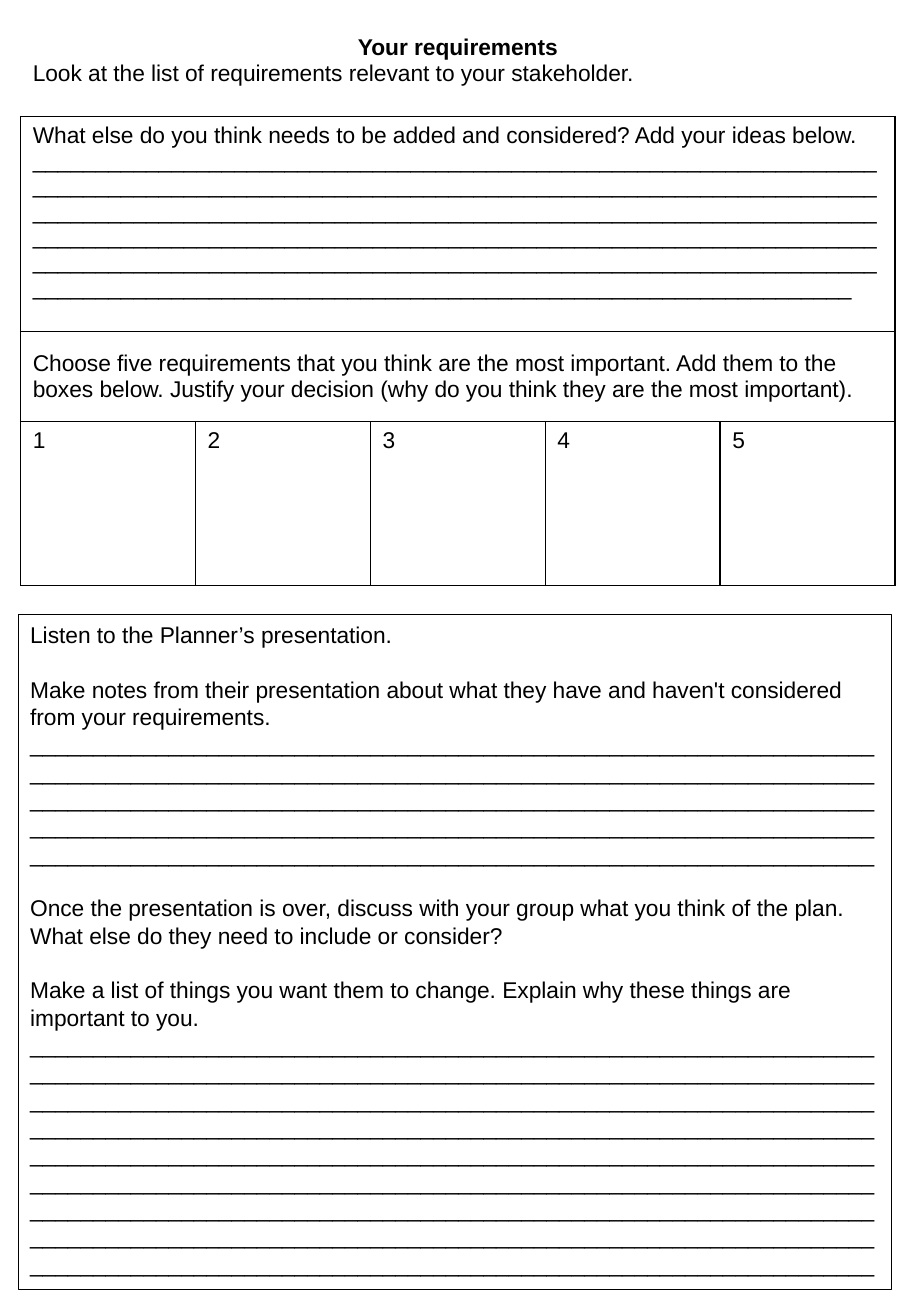
from lxml import etree
from pptx import Presentation
from pptx.dml.color import RGBColor
from pptx.enum.shapes import MSO_SHAPE
from pptx.enum.text import MSO_ANCHOR, PP_ALIGN
from pptx.oxml.ns import qn
from pptx.util import Inches, Pt

LEFT, CENTER = PP_ALIGN.LEFT, PP_ALIGN.CENTER
TOP, MIDDLE = MSO_ANCHOR.TOP, MSO_ANCHOR.MIDDLE
RECTANGLE = MSO_SHAPE.RECTANGLE

WIDTH, HEIGHT = 7.5, 10.83
INK = "000000"
FONT, SIZE = "Arial", 13.5
LINE_MARKS = 67
BLANK_LINE = 16.2
COLUMNS, COLUMN_WIDTH = 5, 1.44
PANEL_WIDTH = 7.19


def writing_lines(count, missing=0):
    return "_" * (count * LINE_MARKS - missing)


INTRO = [
    ("Your requirements", {"bold": True, "align": CENTER}),
    ("Look at the list of requirements relevant to your stakeholder.", {}),
]
IDEAS = [
    ("What else do you think needs to be added and considered? Add your ideas below.", {}),
    (writing_lines(6, missing=2), {}),
]
CHOICE = [
    ("Choose five requirements that you think are the most important. Add them to the "
     "boxes below. Justify your decision (why do you think they are the most important).", {}),
]
WIDE_ROWS = [
    {"content": INTRO, "height": 0.72, "anchor": TOP, "sides": "B"},
    {"content": IDEAS, "height": 1.77, "anchor": TOP, "sides": "LRTB"},
    {"content": CHOICE, "height": 0.74, "anchor": MIDDLE, "sides": "LRTB"},
]
NUMBER_ROW_HEIGHT = 1.35
PRESENTATION_NOTES = [
    ("Listen to the Planner’s presentation.", {}),
    ("Make notes from their presentation about what they have and haven't considered "
     "from your requirements.", {"before": BLANK_LINE}),
    (writing_lines(5), {}),
    ("Once the presentation is over, discuss with your group what you think of the plan. "
     "What else do they need to include or consider?", {"before": BLANK_LINE}),
    ("Make a list of things you want them to change. Explain why these things are "
     "important to you.", {"before": BLANK_LINE}),
    (writing_lines(9), {}),
]


def color(value):
    return RGBColor.from_string(value)


def write(paragraph, text, bold=False, align=LEFT, before=0):
    paragraph.alignment = align
    paragraph.space_before = Pt(before)
    run = paragraph.add_run()
    run.text = text
    run.font.name = FONT
    run.font.size = Pt(SIZE)
    run.font.bold = bold
    run.font.color.rgb = color(INK)


def fill_frame(frame, content):
    for index, (text, style) in enumerate(content):
        paragraph = frame.add_paragraph() if index else frame.paragraphs[0]
        write(paragraph, text, **style)


def border(cell, sides):
    properties = cell._tc.get_or_add_tcPr()
    for side in "LRTB":
        line = etree.SubElement(properties, qn(f"a:ln{side}"), w=str(Pt(1)))
        if side in sides:
            solid = etree.SubElement(line, qn("a:solidFill"))
            etree.SubElement(solid, qn("a:srgbClr"), val=INK)
        else:
            etree.SubElement(line, qn("a:noFill"))
    cell.fill.background()


def add_requirements(slide):
    heights = [row["height"] for row in WIDE_ROWS] + [NUMBER_ROW_HEIGHT]
    table = slide.shapes.add_table(
        len(heights), COLUMNS, Inches(0.17), Inches(0.24),
        Inches(COLUMNS * COLUMN_WIDTH), Inches(sum(heights))).table
    table.first_row = table.horz_banding = False
    for column in table.columns:
        column.width = Inches(COLUMN_WIDTH)
    for row, height in zip(table.rows, heights):
        row.height = Inches(height)
    for index, row in enumerate(WIDE_ROWS):
        cell = table.cell(index, 0)
        cell.merge(table.cell(index, COLUMNS - 1))
        cell.vertical_anchor = row["anchor"]
        fill_frame(cell.text_frame, row["content"])
        for part in table.rows[index].cells:
            border(part, row["sides"])
    for number, cell in enumerate(table.rows[len(WIDE_ROWS)].cells, 1):
        fill_frame(cell.text_frame, [(str(number), {})])
        border(cell, "LRTB")


def add_notes_panel(slide):
    panel = slide.shapes.add_shape(
        RECTANGLE, Inches(0.15), Inches(5.06), Inches(PANEL_WIDTH), Inches(5.55))
    panel.shadow.inherit = False
    panel.fill.background()
    panel.line.color.rgb = color(INK)
    panel.line.width = Pt(0.75)
    frame = panel.text_frame
    frame.word_wrap = True
    frame.vertical_anchor = TOP
    fill_frame(frame, PRESENTATION_NOTES)


def main():
    deck = Presentation()
    deck.slide_width, deck.slide_height = Inches(WIDTH), Inches(HEIGHT)
    slide = deck.slides.add_slide(deck.slide_layouts[6])
    add_requirements(slide)
    add_notes_panel(slide)
    deck.save("out.pptx")


if __name__ == "__main__":
    main()
